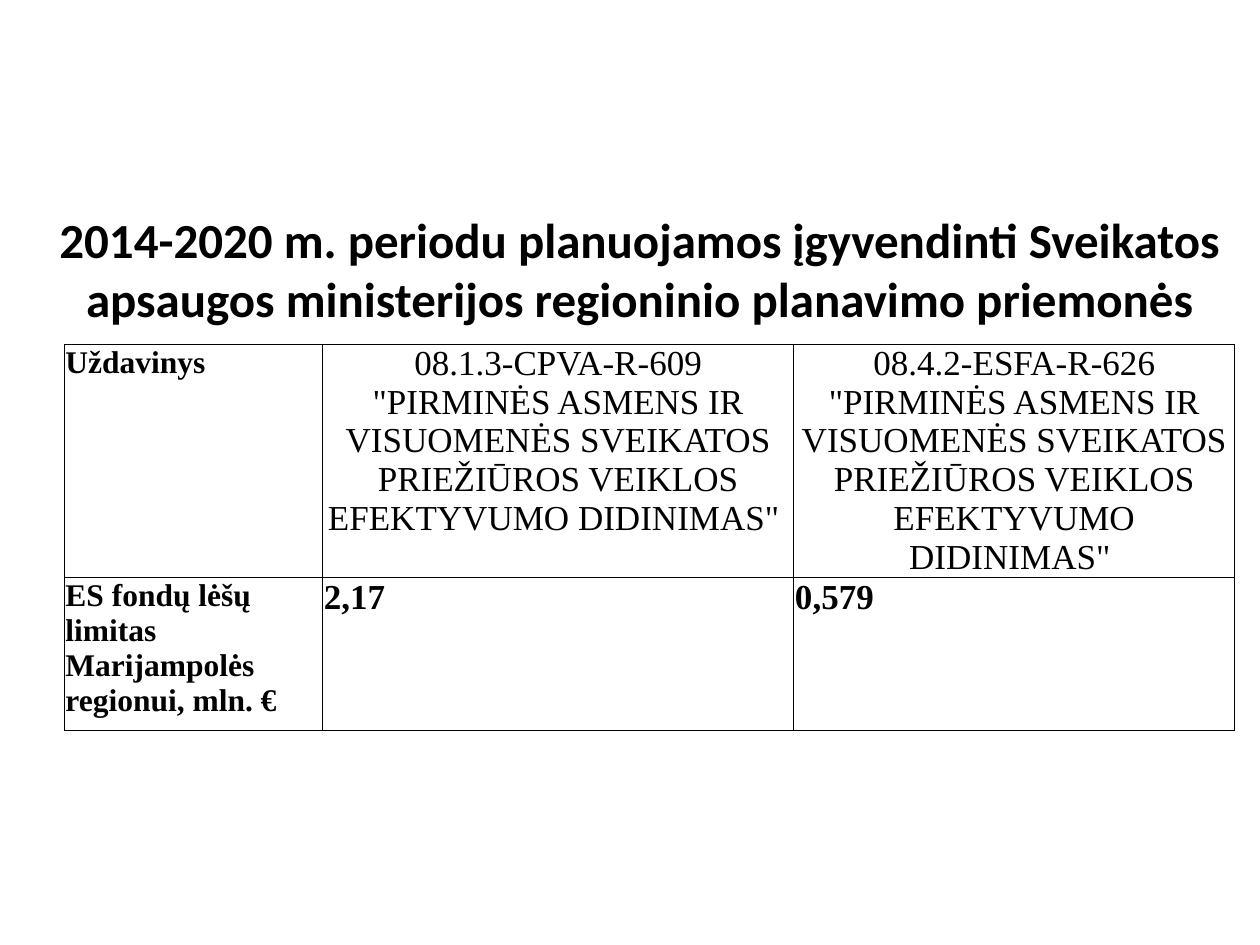
from dataclasses import dataclass

from lxml import etree
from pptx import Presentation
from pptx.dml.color import RGBColor
from pptx.enum.text import MSO_ANCHOR, MSO_AUTO_SIZE, PP_ALIGN
from pptx.oxml.ns import qn
from pptx.util import Pt

PX = 9144
LEFT, CENTER = PP_ALIGN.LEFT, PP_ALIGN.CENTER
TOP, MIDDLE = MSO_ANCHOR.TOP, MSO_ANCHOR.MIDDLE
NO_FIT = MSO_AUTO_SIZE.NONE
COLORS = {"text": "000000", "border": "000000", "background": "FFFFFF"}
BORDER_WIDTH = Pt(0.5)
COL_WIDTHS = (205, 374, 350)
ROW_HEIGHTS = (173, 122)
MEASURE = '"PIRMINĖS ASMENS IR VISUOMENĖS SVEIKATOS PRIEŽIŪROS VEIKLOS EFEKTYVUMO DIDINIMAS" '


@dataclass
class CellText:
    text: str
    size: int
    bold: bool = True
    align: PP_ALIGN = LEFT
    inset: int = 1


ROWS = (
    (
        CellText("Uždavinys", 18),
        CellText("08.1.3-CPVA-R-609 " + MEASURE, 20, False, CENTER, 0),
        CellText("08.4.2-ESFA-R-626 " + MEASURE, 20, False, CENTER, 0),
    ),
    (
        CellText("ES fondų lėšų limitas Marijampolės regionui, mln. €", 18),
        CellText("2,17", 20),
        CellText("0,579", 20),
    ),
)


def set_attrs(obj, values: dict) -> None:
    for name, value in values.items():
        setattr(obj, name, value)


def write_text(tf, text: str, align: PP_ALIGN, font: dict) -> None:
    p = tf.paragraphs[0]
    p.alignment = align
    r = p.add_run()
    r.text = text
    set_attrs(r.font, font)
    r.font.color.rgb = RGBColor.from_string(COLORS["text"])


def add_borders(cell) -> None:
    props = cell._tc.get_or_add_tcPr()
    for i, side in enumerate(("lnL", "lnR", "lnT", "lnB")):
        ln = etree.Element(qn(f"a:{side}"), w=str(BORDER_WIDTH))
        fill = etree.SubElement(ln, qn("a:solidFill"))
        etree.SubElement(fill, qn("a:srgbClr"), val=COLORS["border"])
        props.insert(i, ln)


def fill_cell(cell, spec_text: CellText) -> None:
    inset = spec_text.inset * PX
    set_attrs(cell, {
        "margin_left": inset, "margin_right": inset, "margin_top": inset,
        "margin_bottom": 0, "vertical_anchor": TOP,
    })
    cell.fill.background()
    add_borders(cell)
    write_text(cell.text_frame, spec_text.text, spec_text.align, {
        "name": "Times New Roman", "size": Pt(spec_text.size), "bold": spec_text.bold,
    })


def add_title(s) -> None:
    sp = s.shapes.title
    set_attrs(sp, {"left": 35 * PX, "top": 178 * PX, "width": 945 * PX, "height": 70 * PX})
    tf = sp.text_frame
    set_attrs(tf, {"word_wrap": True, "auto_size": NO_FIT, "vertical_anchor": MIDDLE})
    write_text(
        tf,
        "2014-2020 m. periodu planuojamos įgyvendinti Sveikatos "
        "apsaugos ministerijos regioninio planavimo priemonės",
        CENTER,
        {"name": "Calibri", "size": Pt(28), "bold": True},
    )


def add_measures_table(s) -> None:
    table = s.shapes.add_table(
        len(ROW_HEIGHTS), len(COL_WIDTHS), 51 * PX, 273 * PX,
        sum(COL_WIDTHS) * PX, sum(ROW_HEIGHTS) * PX,
    ).table
    set_attrs(table, {"first_row": False, "horz_banding": False})
    for column, width in zip(table.columns, COL_WIDTHS):
        column.width = width * PX
    for row, height, texts in zip(table.rows, ROW_HEIGHTS, ROWS):
        row.height = height * PX
        for cell, cell_text in zip(row.cells, texts):
            fill_cell(cell, cell_text)


def main() -> None:
    prs = Presentation()
    set_attrs(prs, {"slide_width": 1000 * PX, "slide_height": 750 * PX})
    s = prs.slides.add_slide(prs.slide_layouts[5])
    background = s.background.fill
    background.solid()
    background.fore_color.rgb = RGBColor.from_string(COLORS["background"])
    add_title(s)
    add_measures_table(s)
    prs.save("out.pptx")


if __name__ == "__main__":
    main()
